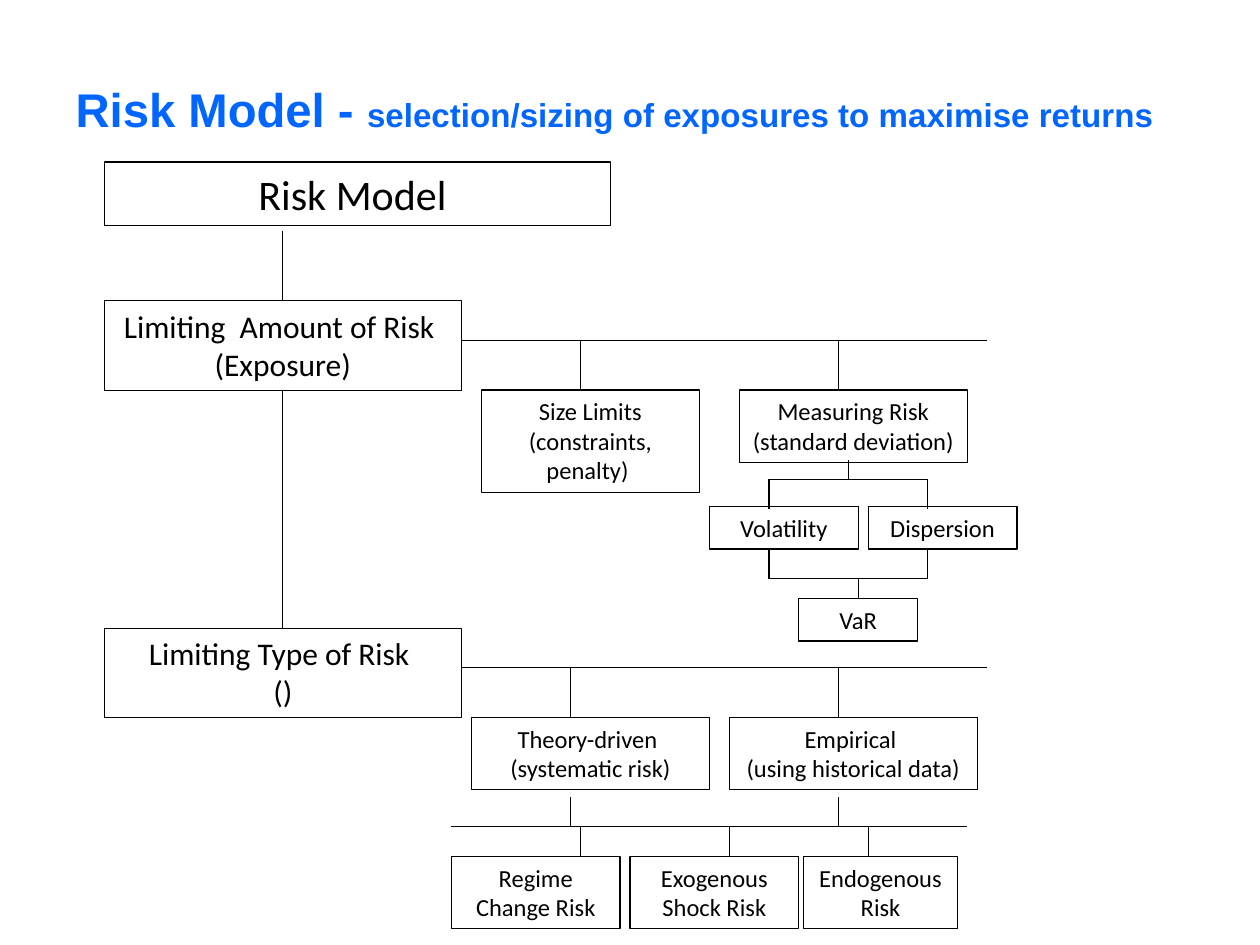
"""Build the risk model hierarchy slide."""
from pptx import Presentation
from pptx.dml.color import RGBColor
from pptx.enum.shapes import MSO_CONNECTOR, MSO_SHAPE
from pptx.enum.text import MSO_ANCHOR, MSO_AUTO_SIZE, PP_ALIGN
from pptx.oxml.ns import qn
from pptx.util import Inches, Pt
from lxml import etree

RECT = MSO_SHAPE.RECTANGLE
STRAIGHT = MSO_CONNECTOR.STRAIGHT
TOP, MIDDLE = MSO_ANCHOR.TOP, MSO_ANCHOR.MIDDLE
GROW, NO_FIT = MSO_AUTO_SIZE.SHAPE_TO_FIT_TEXT, MSO_AUTO_SIZE.NONE
LEFT, CENTER = PP_ALIGN.LEFT, PP_ALIGN.CENTER
BLACK = RGBColor(0, 0, 0)
BLUE = RGBColor(0x00, 0x66, 0xFF)

COLUMNS = 127
X0, Y0 = Inches(0.04), Inches(0.025)
LINE_WIDTH = Pt(0.75)
LINE_SPACING = 1.22
PADDING = Inches(0.1)

TITLE = [("Risk Model - ", 27),
         ("selection/sizing of exposures to maximise returns", 18.9)]

# text, column, row, columns wide, lines of text, point size
BOXES = {
    "model": ("Risk Model ", 10, 16, 51, 1, 24),
    "amount": ("Limiting  Amount of Risk  (Exposure)", 10, 30, 36, 2, 18),
    "type": ("Limiting Type of Risk \n()", 10, 63, 36, 2, 18),
    "size": ("Size Limits (constraints, penalty) ", 48, 39, 22, 3, 14),
    "measure": ("Measuring Risk (standard deviation)", 74, 39, 23, 2, 14),
    "volatility": ("Volatility", 71, 50.75, 15, 1, 14),
    "dispersion": ("Dispersion", 87, 50.75, 15, 1, 14),
    "var": ("VaR", 80, 60, 12, 1, 14),
    "theory": ("Theory-driven \n(systematic risk)", 47, 72, 24, 2, 14),
    "empirical": ("Empirical \n(using historical data)", 73, 72, 25, 2, 14),
    "regime": ("Regime Change Risk", 45, 86, 17, 2, 14),
    "exogenous": ("Exogenous Shock Risk", 63, 86, 17, 2, 14),
    "endogenous": ("Endogenous Risk", 80.5, 86, 15.5, 2, 14),
}

# row, first column, last column
BARS = [(34, 46, 99), (67, 46, 99), (48, 77, 93), (58, 77, 93), (83, 45, 97)]

# columns, first row, last row
DROPS = [((58, 84), 34, 39), ((85,), 46, 48), ((77, 93), 48, 51),
         ((77, 93), 55, 58), ((57, 84), 67, 72), ((57, 84), 80, 83),
         ((58, 73, 87), 83, 86)]

# column, first row, last row, box above, box below
JOINED = [(28, 23, 30, None, "amount"), (28, 39, 63, "amount", "type"),
          (86, 58, 60, None, "var")]


def add_box(slide, unit, text, col, row, cols, lines, size):
    height = int(2 * Inches(0.05) + lines * Pt(size) * LINE_SPACING)
    s = slide.shapes.add_shape(RECT, X0 + int(col * unit), Y0 + int(row * unit),
                               int(cols * unit), height)
    s.shadow.inherit = False
    s.fill.background()
    s.line.color.rgb = BLACK
    s.line.width = LINE_WIDTH
    tf = s.text_frame
    tf.word_wrap = True
    tf.auto_size = GROW
    tf.vertical_anchor = TOP
    tf.text = text
    for p in tf.paragraphs:
        p.alignment = CENTER
        for r in p.runs:
            r.font.name = "Calibri"
            r.font.size = Pt(size)
            r.font.color.rgb = BLACK
    return s


def add_line(slide, unit, col1, row1, col2, row2):
    c = slide.shapes.add_connector(STRAIGHT, X0 + col1 * unit, Y0 + row1 * unit,
                                   X0 + col2 * unit, Y0 + row2 * unit)
    c.line.color.rgb = BLACK
    c.line.width = LINE_WIDTH
    etree.SubElement(c._element.spPr, qn("a:effectLst"))
    return c


def add_title(slide):
    s = slide.shapes.title
    s.left, s.top, s.width, s.height = (Inches(v) for v in (0.5, 0.52, 9, 0.69))
    tf = s.text_frame
    tf.word_wrap = True
    tf.auto_size = NO_FIT
    tf.vertical_anchor = MIDDLE
    p = tf.paragraphs[0]
    p.alignment = LEFT
    for text, size in TITLE:
        r = p.add_run()
        r.text = text
        r.font.name = "Arial"
        r.font.size = Pt(size)
        r.font.bold = True
        r.font.color.rgb = BLUE


def main():
    prs = Presentation()
    prs.slide_width, prs.slide_height = Inches(10), Inches(7.5)
    unit = prs.slide_width // COLUMNS
    slide = prs.slides.add_slide(prs.slide_layouts[5])
    add_title(slide)
    boxes = {name: add_box(slide, unit, *box) for name, box in BOXES.items()}
    for row, first, last in BARS:
        add_line(slide, unit, first, row, last, row)
    for cols, first, last in DROPS:
        for col in cols:
            add_line(slide, unit, col, first, col, last)
    for col, first, last, above, below in JOINED:
        c = add_line(slide, unit, col, first, col, last)
        if above:
            c.begin_connect(boxes[above], 2)
        c.end_connect(boxes[below], 0)
    prs.save("out.pptx")


if __name__ == "__main__":
    main()
